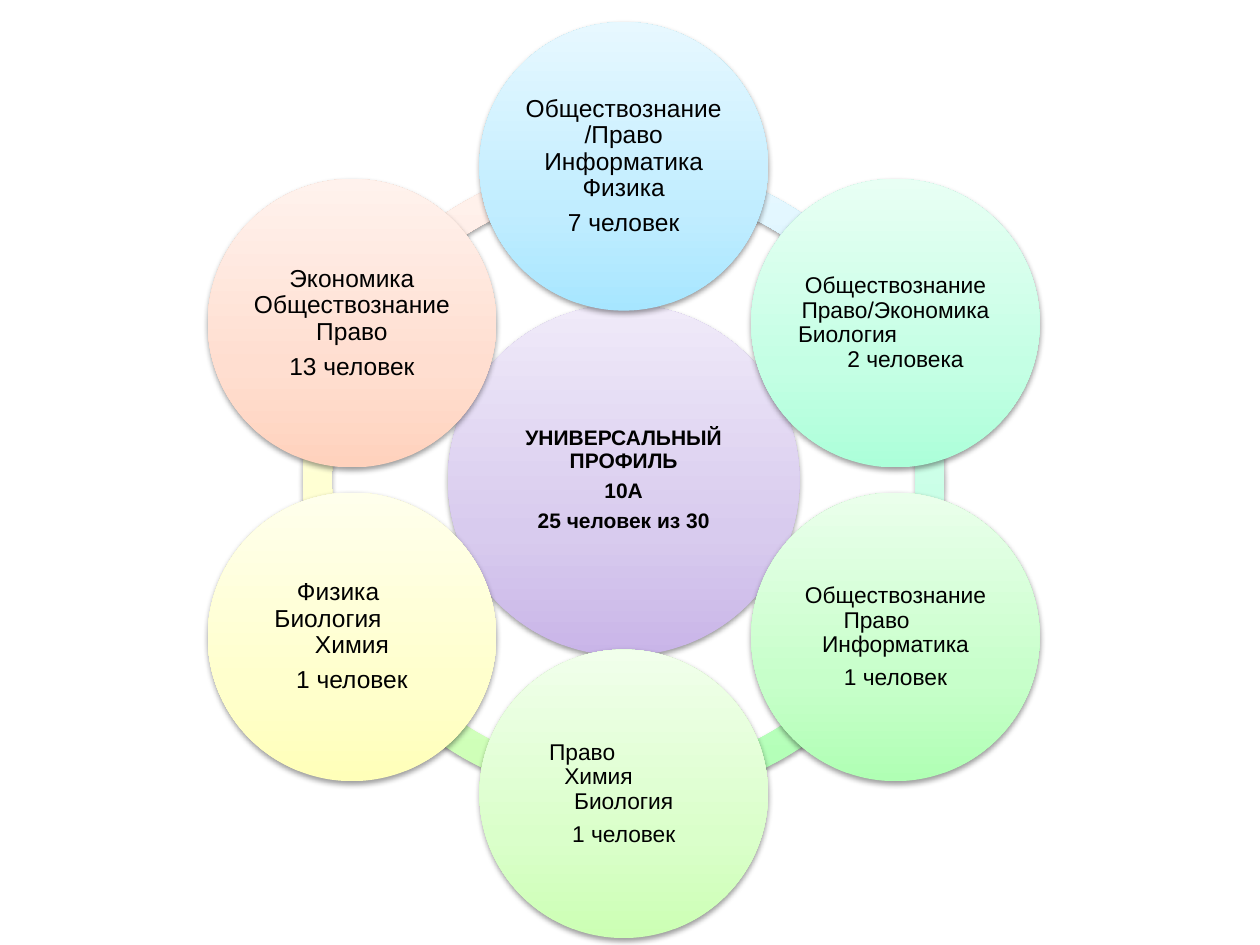
from math import cos, radians, sin

from pptx import Presentation
from pptx.dml.color import RGBColor
from pptx.enum.shapes import MSO_SHAPE
from pptx.enum.text import MSO_ANCHOR, PP_ALIGN
from pptx.oxml import parse_xml
from pptx.util import Inches, Pt

THEME = {
    "font": "Arial",
    "text": RGBColor(0, 0, 0),
    "hub": 12, "large": 14, "small": 13,
    "violet": ("C9B5E8", "D8CBEE", "F0EAF9"),
    "blue": ("A7E6FF", "C1EDFF", "E7F8FF"),
    "teal": ("ACFFD9", "C4FFE4", "E8FFF4"),
    "green": ("B0FFB4", "C7FFCA", "EAFFEB"),
    "lime": ("CCFFB4", "DAFFCA", "F1FFEB"),
    "yellow": ("FFFFB9", "FFFFCD", "FFFFEC"),
    "orange": ("FFD2BD", "FFDED0", "FFF2ED"),
}
NS = 'xmlns:a="http://schemas.openxmlformats.org/drawingml/2006/main"'

# Each circle holds groups of lines; a line is its text and its shift
# from the centre, as a share of the slide's width.
HUB = [[("УНИВЕРСАЛЬНЫЙ ПРОФИЛЬ", 0)], [("10А", 0)], [("25 человек из 30", 0)]]
NODES = [  # clockwise from the top
    ("blue", "large", [[("Обществознание/Право Информатика Физика", 0)],
                       [("7 человек", 0)]]),
    ("teal", "small", [[("Обществознание Право/Экономика", 0),
                        ("Биология", -0.038), ("2 человека", 0.008)]]),
    ("green", "small", [[("Обществознание", 0), ("Право", -0.015),
                         ("Информатика", 0)], [("1 человек", 0)]]),
    ("lime", "small", [[("Право", -0.033), ("Химия", -0.02),
                        ("Биология", 0)], [("1 человек", 0)]]),
    ("yellow", "large", [[("Физика", -0.011), ("Биология", -0.019),
                          ("Химия", 0)], [("1 человек", 0)]]),
    ("orange", "large", [[("Экономика Обществознание Право", 0)],
                         [("13 человек", 0)]]),
]

prs = Presentation()
prs.slide_width, prs.slide_height = Inches(10), Inches(7.5)
W, H = prs.slide_width, prs.slide_height
s = prs.slides.add_slide(prs.slide_layouts[6])

CX, CY = 0.495 * W, 0.508 * H
RING, ARC_SIZE, HUB_SIZE, NODE_SIZE = 0.249 * W, 0.509 * W, 0.279 * W, 0.229 * W
STEP = 360 / len(NODES)


def add_round(kind, x, y, size, color):
    """Add a shape centred on x, y with a vertical gradient and a soft shadow."""
    sp = s.shapes.add_shape(kind, int(x - size / 2), int(y - size / 2),
                            int(size), int(size))
    stops = "".join(f'<a:gs pos="{pos}"><a:srgbClr val="{c}"/></a:gs>'
                    for pos, c in zip((0, 35000, 100000), THEME[color]))
    spPr = sp._element.spPr
    spPr.append(parse_xml(f'<a:gradFill {NS} rotWithShape="1"><a:gsLst>{stops}</a:gsLst>'
                          '<a:lin ang="16200000" scaled="1"/></a:gradFill>'))
    sp.line.fill.background()
    spPr.append(parse_xml(
        f'<a:effectLst {NS}><a:outerShdw blurRad="{Pt(3.1)}" dist="{Pt(1.6)}" '
        'dir="5400000" rotWithShape="0"><a:srgbClr val="000000">'
        '<a:alpha val="38000"/></a:srgbClr></a:outerShdw></a:effectLst>'))
    return sp


def write_groups(sp, groups, size, bold=False):
    tf = sp.text_frame
    tf.word_wrap = True
    tf.vertical_anchor = MSO_ANCHOR.MIDDLE
    tf.margin_left = tf.margin_right = tf.margin_top = tf.margin_bottom = Inches(0.02)
    for g, group in enumerate(groups):
        for i, (text, shift) in enumerate(group):
            p = tf.paragraphs[0] if g == i == 0 else tf.add_paragraph()
            p.alignment = PP_ALIGN.CENTER
            p.line_spacing = 0.9
            p.space_before = Pt(0.35 * size if g and i == 0 else 0)
            # A margin on one side moves centred text by half its width;
            # both are always set, so that none carries over to the next line.
            pPr = p._p.get_or_add_pPr()
            pPr.set("marL", str(int(2 * max(shift, 0) * W)))
            pPr.set("marR", str(int(2 * max(-shift, 0) * W)))
            pPr.set("indent", "0")
            r = p.add_run()
            r.text = text
            r.font.name, r.font.size, r.font.bold = THEME["font"], Pt(size), bold
            r.font.color.rgb = THEME["text"]


for i, (color, _, _) in reversed(list(enumerate(NODES))):
    arc = add_round(MSO_SHAPE.BLOCK_ARC, CX, CY, ARC_SIZE, color)
    start = (270 + i * STEP) % 360
    # Angles are stored in 60000ths of a degree, adjustments in 100000ths.
    arc.adjustments[0] = start * 0.6
    arc.adjustments[1] = (start + STEP) % 360 * 0.6
    arc.adjustments[2] = 0.045

hub = add_round(MSO_SHAPE.OVAL, CX, CY, HUB_SIZE, "violet")
write_groups(hub, HUB, THEME["hub"], bold=True)

for i, (color, size, groups) in enumerate(NODES):
    angle = radians(i * STEP)
    node = add_round(MSO_SHAPE.OVAL, CX + RING * sin(angle), CY - RING * cos(angle),
                     NODE_SIZE, color)
    write_groups(node, groups, THEME[size])

prs.save("out.pptx")
